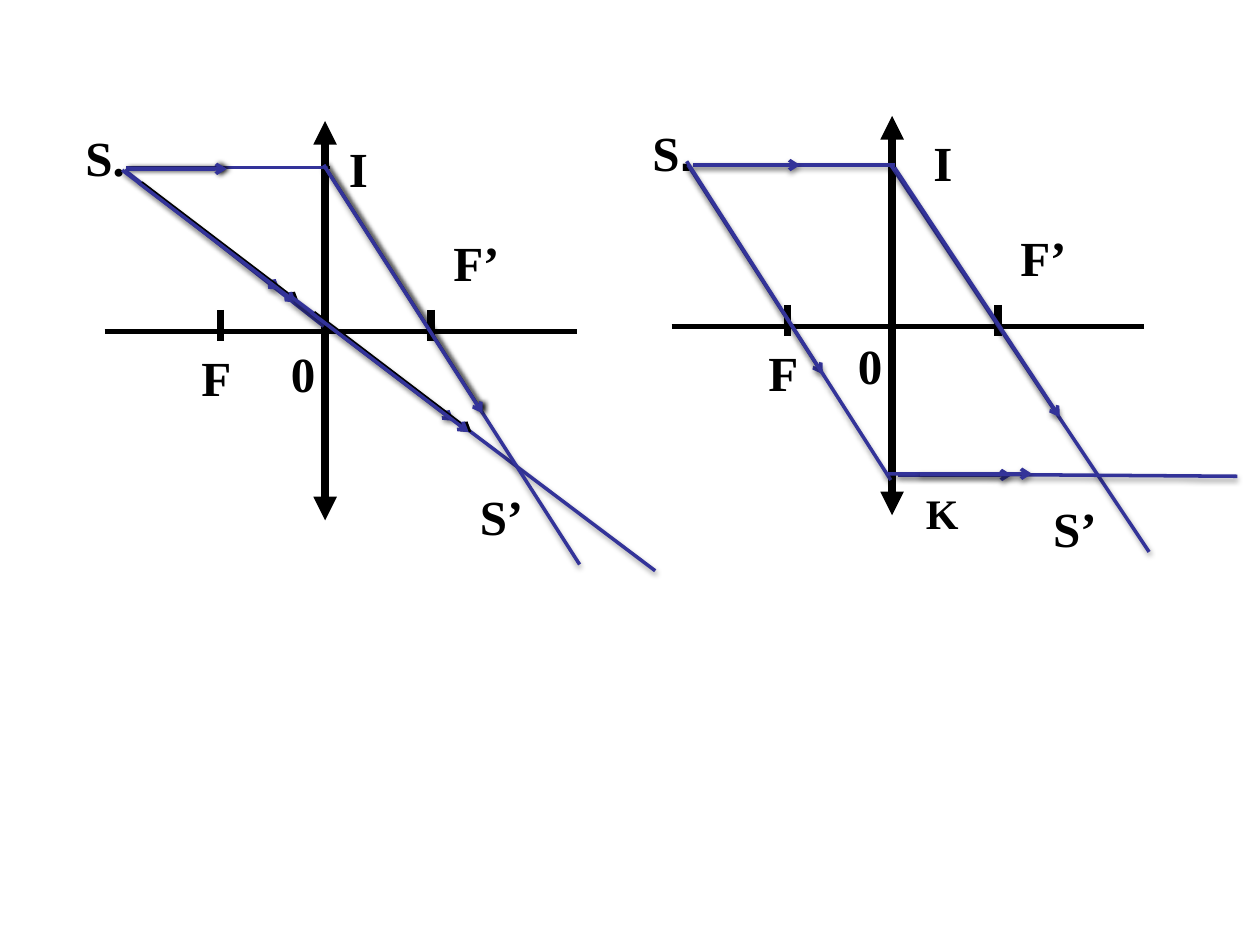
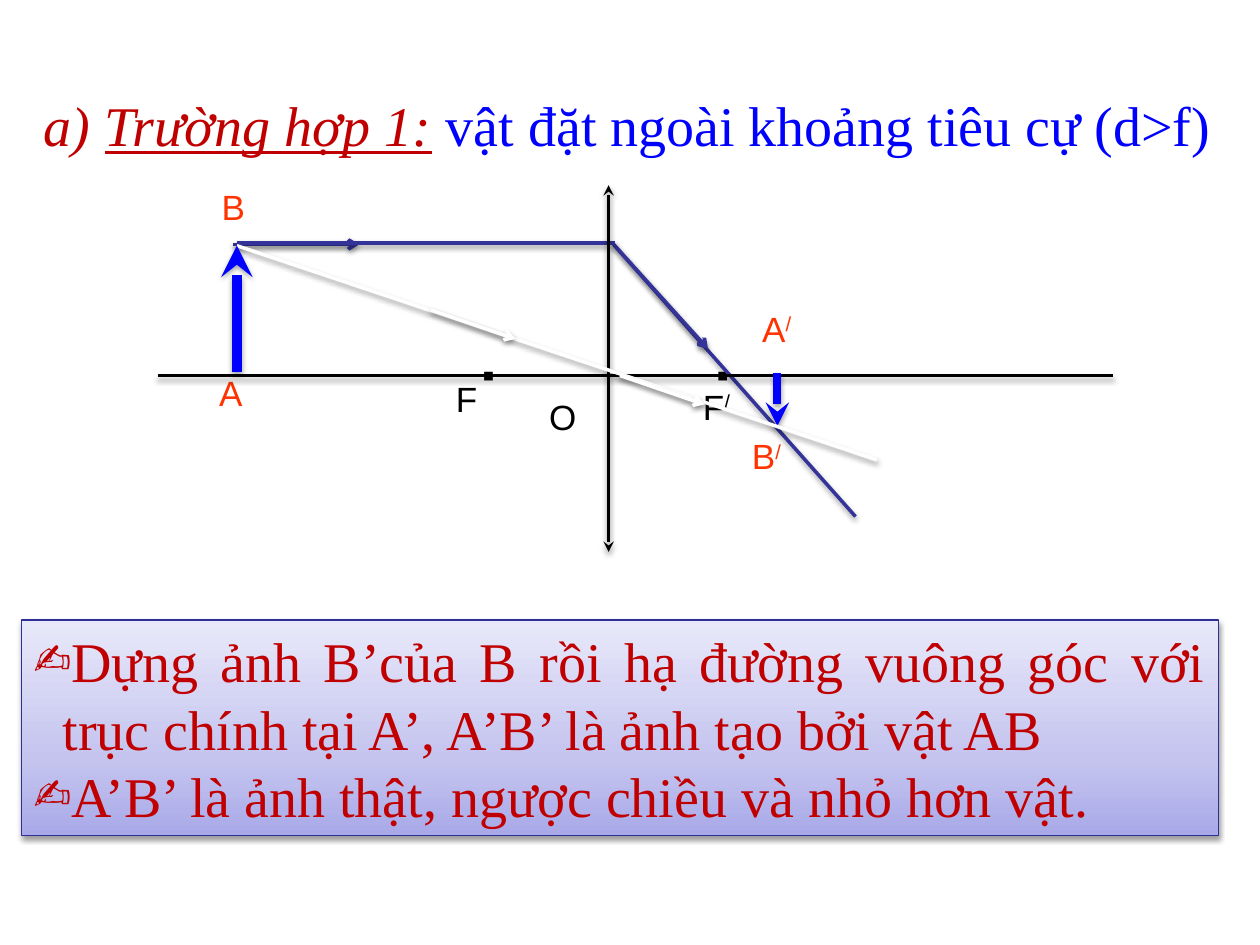
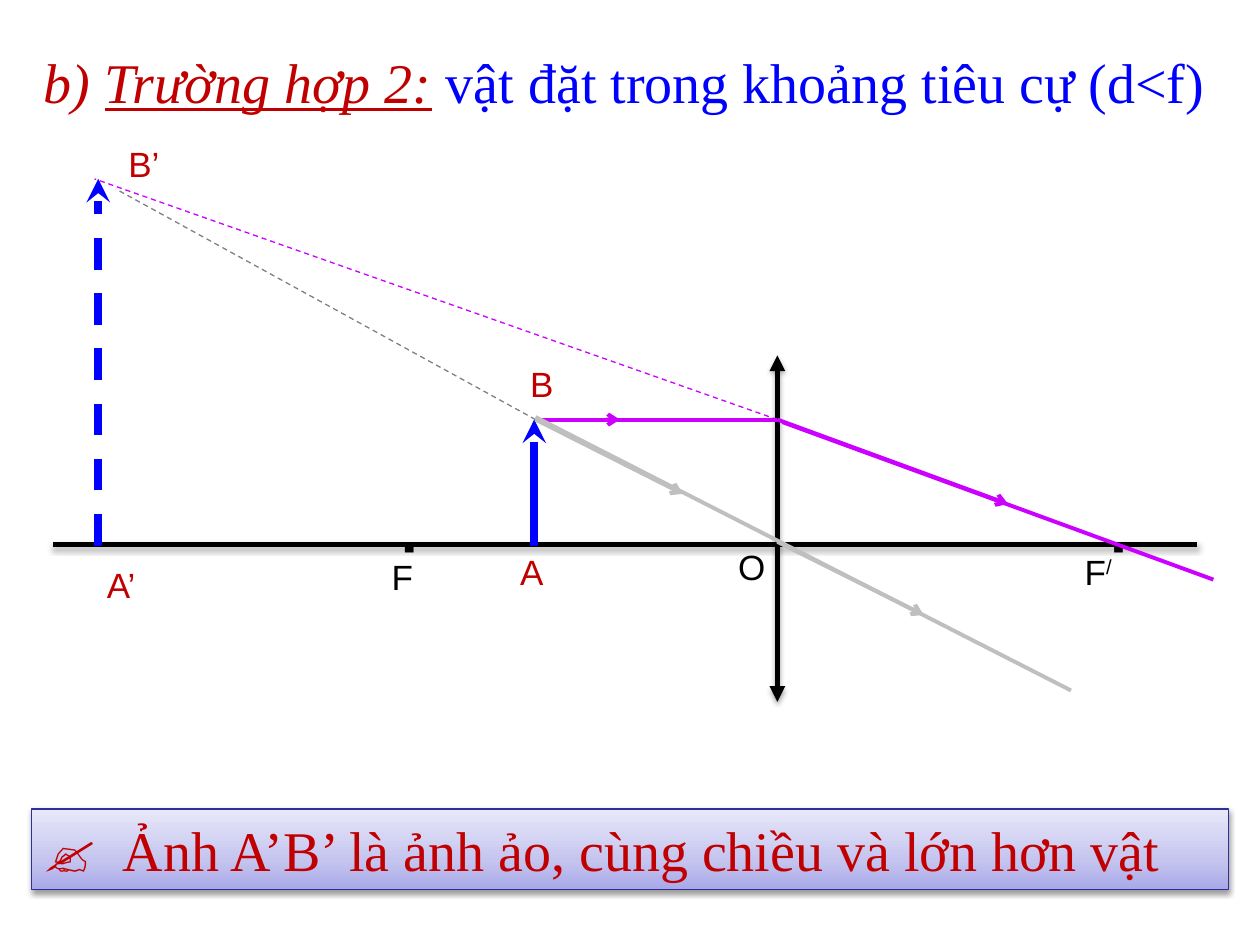
"""Draws three slides of ray diagrams for a converging lens."""
from dataclasses import dataclass, field, replace
from typing import Optional

from pptx import Presentation
from pptx import util as u
from pptx.dml.color import RGBColor
from pptx.enum import dml, shapes, text
from pptx.oxml import parse_xml
from pptx.oxml.ns import nsdecls, qn


@dataclass(frozen=True)
class Theme:
    serif: str = "Times New Roman"
    sans: str = "Arial"
    black: str = "000000"
    white: str = "FFFFFF"
    ink: str = "333399"
    blue: str = "0000FF"
    red: str = "C00000"
    flame: str = "FF3300"
    pink: str = "CC00FF"
    gray: str = "BFBFBF"
    slate: str = "808080"
    edge: str = "2F2F98"
    fade: tuple = ((0, "A9A9E9"), (35, "C4C4EF"), (100, "E8E8FA"))
    big: int = 32
    mark: int = 28
    small: int = 24
    note: int = 20


T = Theme()


@dataclass(frozen=True)
class Shade:
    alpha: int = 38
    blur: float = 3.1
    dist: float = 1.6
    angle: int = 90


SOFT = Shade()
DENSE = Shade(35, 3.1, 1.8)
HARD = Shade(100, 0, 1.6, 0)
SIDE = Shade(100, 3.1, 1.6, 0)


@dataclass(frozen=True)
class Pen:
    color: str
    width: float
    shade: Optional[Shade] = None
    head: str = ""
    tail: str = ""
    dash: bool = False


@dataclass(frozen=True)
class Ray:
    x1: float
    y1: float
    x2: float
    y2: float
    pen: Pen


@dataclass(frozen=True)
class Run:
    text: str
    form: dict = field(default_factory=dict)
    color: str = T.black
    raised: bool = False


@dataclass(frozen=True)
class Label:
    x: float
    y: float
    wide: float
    high: float
    runs: tuple


def effect(part, shade: Optional[Shade]) -> None:
    inner = ""
    if shade:
        inner = (f'<a:outerShdw blurRad="{u.Pt(shade.blur)}" dist="{u.Pt(shade.dist)}" '
                 f'dir="{shade.angle * 60000}" rotWithShape="0"><a:srgbClr val="{T.black}">'
                 f'<a:alpha val="{shade.alpha * 1000}"/></a:srgbClr></a:outerShdw>')
    part.append(parse_xml(f'<a:effectLst {nsdecls("a")}>{inner}</a:effectLst>'))


def draw(slide, rays: list[Ray]) -> None:
    for ray in rays:
        pen = ray.pen
        ends = [u.Inches(v) for v in (ray.x1, ray.y1, ray.x2, ray.y2)]
        item = slide.shapes.add_connector(shapes.MSO_CONNECTOR.STRAIGHT, *ends)
        item.line.color.rgb = RGBColor.from_string(pen.color)
        item.line.width = u.Pt(pen.width)
        if pen.dash:
            item.line.dash_style = dml.MSO_LINE.DASH
        part = item._element.spPr
        for tag, kind in (("headEnd", pen.head), ("tailEnd", pen.tail)):
            if kind:
                part.find(qn("a:ln")).append(
                    parse_xml(f'<a:{tag} {nsdecls("a")} type="{kind}"/>'))
        effect(part, pen.shade)


def write(para, runs: tuple, base: dict) -> None:
    for run in runs:
        item = para.add_run()
        item.text = run.text
        for key, value in {**base, **run.form}.items():
            setattr(item.font, key, value)
        item.font.color.rgb = RGBColor.from_string(run.color)
        if run.raised:
            item._r.get_or_add_rPr().set("baseline", "30000")


def label(slide, item: Label, base: dict):
    box = slide.shapes.add_textbox(*map(u.Inches, (item.x, item.y, item.wide, item.high)))
    box.text_frame.word_wrap = True
    write(box.text_frame.paragraphs[0], item.runs, base)
    return box


BOLD = {"name": T.serif, "size": u.Pt(T.mark), "bold": True}
PLAIN = {"name": T.sans, "size": u.Pt(T.note)}
LARGE = {"name": T.serif, "size": u.Pt(T.big)}


def tags(slide, rows: list, high: float, color: str, base: dict) -> None:
    for word, x, y, wide in rows:
        stem = word.rstrip("/")
        runs = (Run(stem, color=color),)
        if stem != word:
            runs += (Run("/", color=color, raised=True),)
        label(slide, Label(x, y, wide, high, runs), base)


def title(slide, y: float, mark: str, case: str, rest: str) -> None:
    slant = {"italic": True}
    runs = (Run(mark, slant, T.red), Run(case, {**slant, "underline": True}, T.red),
            Run(" ", slant, T.red), Run(rest, color=T.blue))
    box = label(slide, Label(0.25, y, 9.5, 0.64, runs), LARGE)
    box.text_frame.paragraphs[0].alignment = text.PP_ALIGN.JUSTIFY


def panel(slide, x: float, y: float, high: float, lines: list, bullet: str = "") -> None:
    box = slide.shapes.add_shape(shapes.MSO_SHAPE.RECTANGLE,
                                 *map(u.Inches, (x, y, 9.5, high)))
    box.fill.background()
    box.line.color.rgb = RGBColor.from_string(T.edge)
    box.line.width = u.Pt(0.75)
    part = box._element.spPr
    stops = "".join(f'<a:gs pos="{pos * 1000}"><a:srgbClr val="{color}"/></a:gs>'
                    for pos, color in T.fade)
    part.replace(part.find(qn("a:noFill")), parse_xml(
        f'<a:gradFill {nsdecls("a")} rotWithShape="1"><a:gsLst>{stops}</a:gsLst>'
        '<a:lin ang="16200000" scaled="0"/></a:gradFill>'))
    effect(part, SOFT)
    frame = box.text_frame
    frame.word_wrap = True
    for i, runs in enumerate(lines):
        para = frame.add_paragraph() if i else frame.paragraphs[0]
        para.alignment = text.PP_ALIGN.JUSTIFY
        if bullet:
            props = para._p.get_or_add_pPr()
            props.set("marL", str(u.Inches(0.23)))
            props.set("indent", str(u.Inches(-0.23)))
            props.append(parse_xml(f'<a:buChar {nsdecls("a")} char="{bullet}"/>'))
        write(para, runs, LARGE)


def lens(slide, dx: float, dy: float, drop: float, name: tuple) -> None:
    axis, thick = Pen(T.black, 3), Pen(T.black, 4.5)
    plane = replace(thick, head="triangle", tail="triangle")
    rows = [(0.83, 2.63, 4.58, 2.63, axis), (2.58, 0.96, 2.58, 4.13, plane)]
    rows += [(x, 2.46, x, 2.71, thick) for x in (1.75, 3.42)]
    draw(slide, [Ray(a + dx, b + dy, c + dx, d + dy, pen) for a, b, c, d, pen in rows])
    label(slide, Label(0.58 + dx, 0.96 + dy, 0.67, 0.57, name), BOLD)
    spots = [("F", 1.5, 2.71 + dy, 0.75), ("F’", 3.5, 1.8 + dy, 0.75),
             ("0", 2.21, 2.68 + drop, 0.58)]
    tags(slide, [(word, x + dx, y, wide) for word, x, y, wide in spots],
         0.57, T.black, BOLD)


def points(slide) -> None:
    lens(slide, 0, 0, 0, (Run("S."),))
    lens(slide, 4.5, -0.04, -0.07, (Run("S"), Run(".", {"name": T.sans})))
    tags(slide, [("S’", 3.71, 3.81, 0.83), ("S’", 8.26, 3.91, 0.75),
                 ("I", 2.67, 1.05, 0.67), ("I", 7.31, 1, 0.67)], 0.57, T.black, BOLD)
    tags(slide, [("K", 7.25, 3.82, 0.35)], 0.5, T.black, {**BOLD, "size": u.Pt(T.small)})
    beam = Pen(T.ink, 2, SOFT)
    tip = replace(beam, tail="arrow")
    hard = replace(tip, shade=HARD)
    side = replace(tip, shade=SIDE)
    draw(slide, [
        Ray(5.5, 1.31, 7.1, 1.31, beam), Ray(5.5, 1.31, 6.35, 1.31, tip),
        Ray(7.07, 1.31, 9.12, 4.38, beam), Ray(7.1, 1.33, 8.41, 3.31, tip),
        Ray(5.46, 1.31, 6.53, 2.97, tip), Ray(5.45, 1.28, 7.07, 3.81, beam),
        Ray(1, 1.33, 2.6, 1.33, replace(beam, shade=HARD)),
        Ray(1, 1.34, 1.8, 1.34, side),
        Ray(0.99, 1.35, 2.57, 2.59, beam), Ray(0.97, 1.35, 2.22, 2.3, tip),
        Ray(1.1, 1.45, 2.35, 2.4, hard), Ray(2.35, 2.39, 3.6, 3.34, tip),
        Ray(2.32, 2.36, 5.2, 4.53, beam), Ray(2.47, 2.48, 3.72, 3.43, hard),
        Ray(2.57, 1.31, 4.6, 4.48, beam), Ray(2.57, 1.31, 3.83, 3.28, side),
        Ray(7.13, 3.77, 8.03, 3.77, tip), Ray(7.03, 3.76, 9.82, 3.78, beam),
        Ray(7.3, 3.76, 8.19, 3.76, tip)])


def outer(slide) -> None:
    panel(slide, 0.17, 4.92, 1.71, [
        (Run("Dựng ảnh B’của B rồi hạ đường vuông góc với trục chính tại A’, "
             "A’B’ là ảnh tạo bởi vật AB", color=T.red),),
        (Run("A’B’ là ảnh thật, ngược chiều và nhỏ hơn vật.", color=T.red),)], "✍")
    title(slide, 0.67, "a) ", "Trường hợp 1:", "vật đặt ngoài khoảng tiêu cự (d>f)")
    tags(slide, [("▪", 3.73, 2.75, 1.33), ("▪", 5.59, 2.75, 1.33), ("F", 3.52, 2.95, 1.33),
                 ("F/", 5.48, 3.01, 1.33), ("O", 4.26, 3.09, 0.42)], 0.43, T.black, PLAIN)
    tags(slide, [("A", 1.64, 2.9, 1.42), ("B", 1.66, 1.42, 1.42), ("B/", 5.87, 3.4, 1.17),
                 ("A/", 5.95, 2.39, 1.08)], 0.43, T.flame, PLAIN)
    beam, axis, pale = (Pen(color, 2, SOFT) for color in (T.ink, T.black, T.white))
    tip, glint = (replace(pen, tail="arrow") for pen in (beam, pale))
    draw(slide, [
        Ray(4.87, 1.94, 6.79, 4.1, beam), Ray(4.87, 1.94, 5.62, 2.77, tip),
        Ray(1.85, 1.94, 2.85, 1.94, tip), Ray(1.88, 1.93, 4.88, 1.93, beam),
        Ray(1.25, 2.98, 8.83, 2.98, axis),
        Ray(4.83, 1.47, 4.83, 4.38, replace(axis, head="stealth", tail="stealth")),
        Ray(6.17, 2.96, 6.17, 3.38, Pen(T.blue, 4.5, SOFT, tail="stealth")),
        Ray(1.88, 1.95, 6.96, 3.65, pale), Ray(3.42, 2.46, 4.09, 2.69, glint),
        Ray(4.92, 2.98, 5.59, 3.21, glint),
        Ray(1.88, 2.95, 1.88, 1.95, Pen(T.blue, 6, DENSE, tail="stealth"))])


def inner(slide) -> None:
    panel(slide, 0.25, 6.42, 0.64, [
        (Run("✍  ", {"bold": True}, T.red),
         Run("Ảnh A’B’ là ảnh ảo, cùng chiều và lớn hơn vật", color=T.red))])
    title(slide, 0.33, "b) ", "Trường hợp 2:", "vật đặt trong khoảng tiêu cự (d<f)")
    tags(slide, [("▪", 3.1, 4.11, 1.42), ("▪", 8.73, 4.11, 0.94), ("F", 3.01, 4.36, 1.58),
                 ("F/", 8.51, 4.32, 0.58), ("O", 5.76, 4.28, 1.5)], 0.5, T.black, PLAIN)
    tags(slide, [("A", 4.03, 4.32, 1.42), ("B", 4.11, 2.83, 1.42), ("B’", 0.92, 1.08, 1.42),
                 ("A’", 0.75, 4.42, 1.42)], 0.4, T.red, PLAIN)
    axis = Pen(T.black, 3, DENSE)
    pink, gray = (Pen(color, 2.25) for color in (T.pink, T.gray))
    tip, dim = (replace(pen, tail="arrow") for pen in (pink, gray))
    stem = Pen(T.blue, 4.5, tail="stealth")
    draw(slide, [
        Ray(0.42, 4.32, 9.5, 4.32, axis),
        Ray(6.17, 2.82, 6.17, 5.57, replace(axis, head="triangle", tail="triangle")),
        Ray(4.24, 4.33, 4.24, 3.33, stem),
        Ray(4.25, 3.33, 6.17, 3.33, pink), Ray(4.75, 3.33, 4.92, 3.33, tip),
        Ray(6.21, 3.35, 9.63, 4.6, pink), Ray(6.17, 3.33, 8, 4, tip),
        Ray(6.17, 3.33, 0.75, 1.42, Pen(T.pink, 0.75, dash=True)),
        Ray(4.25, 3.33, 0.92, 1.5, Pen(T.slate, 0.75, dash=True)),
        Ray(0.78, 4.33, 0.78, 1.42, replace(stem, dash=True)),
        Ray(4.25, 3.31, 8.5, 5.48, gray), Ray(4.25, 3.33, 5.42, 3.92, dim),
        Ray(6.17, 4.3, 7.33, 4.88, dim)])


def main() -> None:
    deck = Presentation()
    deck.slide_width, deck.slide_height = u.Inches(10), u.Inches(7.5)
    for build in (points, outer, inner):
        build(deck.slides.add_slide(deck.slide_layouts[6]))
    deck.save("out.pptx")


if __name__ == "__main__":
    main()
